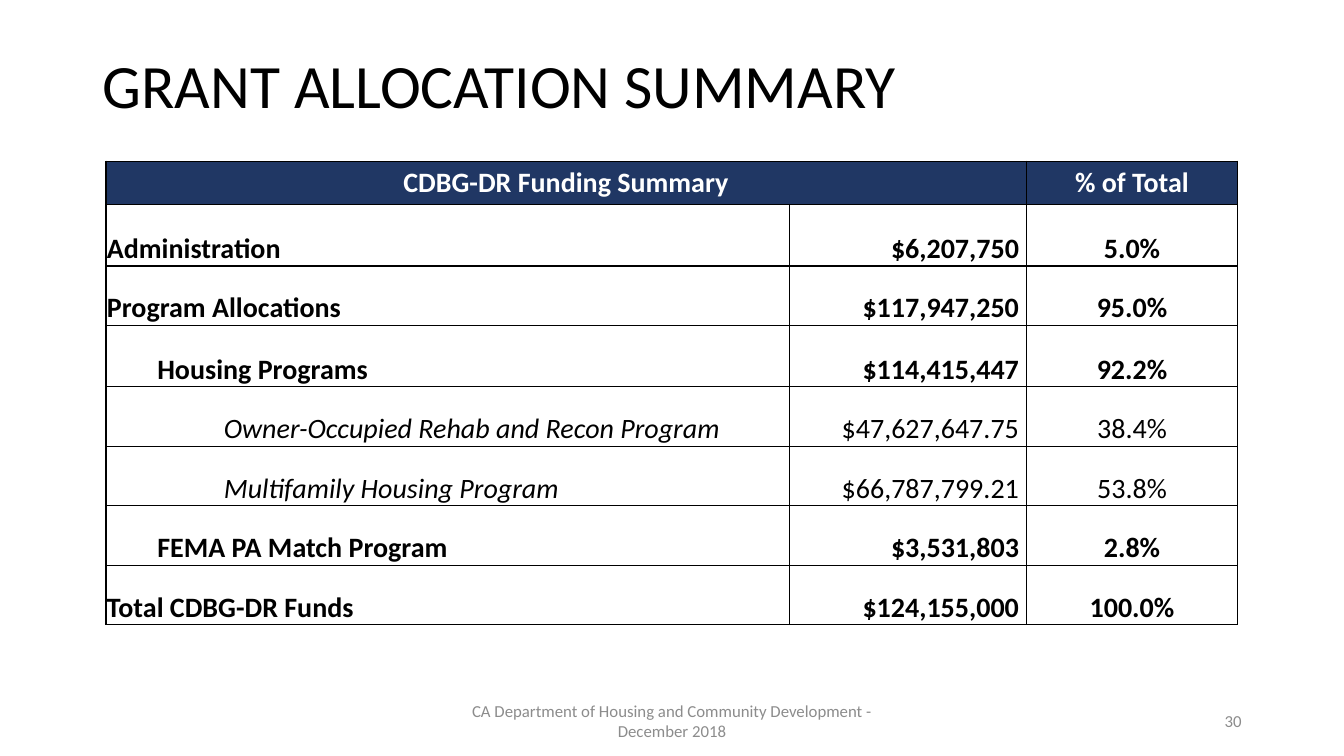
"""Build the grant allocation summary slide."""
import pptx
import pptx.util
import pptx.dml.color
import pptx.enum.text
import pptx.oxml
import pptx.oxml.ns

WIDE = pptx.util.Inches(13.333)
HIGH = pptx.util.Inches(7.5)
FONT = "Calibri"
BLACK, WHITE, NAVY, GRAY = "000000", "FFFFFF", "203764", "8C8C8C"
ALIGN = pptx.enum.text.PP_ALIGN
ANCHOR = pptx.enum.text.MSO_ANCHOR

COLS = [50.85, 17.63, 15.75]
ROWS = [5.73, 8.13, 7.87, 8.13, 7.87, 7.87, 7.87, 7.87]
FUNDS = [
    (0, "Administration", "$6,207,750", "5.0%"),
    (0, "Program Allocations", "$117,947,250", "95.0%"),
    (1, "Housing Programs", "$114,415,447", "92.2%"),
    (2, "Owner-Occupied Rehab and Recon Program", "$47,627,647.75", "38.4%"),
    (2, "Multifamily Housing Program", "$66,787,799.21", "53.8%"),
    (1, "FEMA PA Match Program", "$3,531,803", "2.8%"),
    (0, "Total CDBG-DR Funds", "$124,155,000", "100.0%"),
]


def across(share):
    """Turn a percentage of the slide width into a length."""
    return pptx.util.Emu(round(WIDE * share / 100))


def down(share):
    """Turn a percentage of the slide height into a length."""
    return pptx.util.Emu(round(HIGH * share / 100))


def color(code):
    """Turn a hex string into a colour."""
    return pptx.dml.color.RGBColor.from_string(code)


def style(par, size, code, align, bold=False, slant=False):
    """Set the font and alignment of a paragraph."""
    par.alignment = align
    font = par.font
    font.name, font.size = FONT, pptx.util.Pt(size)
    font.bold, font.italic = bold, slant
    font.color.rgb = color(code)


def label(slide, box, text, size, code, align):
    """Add a wrapped text box and return its paragraph."""
    left, top, width, height = box
    shape = slide.shapes.add_textbox(
        across(left), down(top), across(width), down(height))
    frame = shape.text_frame
    frame.word_wrap = True
    frame.vertical_anchor = ANCHOR.MIDDLE
    par = frame.paragraphs[0]
    par.text = text
    style(par, size, code, align)
    return par


def border(cell):
    """Draw a thin black line on each side of a cell."""
    props = cell._tc.get_or_add_tcPr()
    for side in ("lnL", "lnR", "lnT", "lnB"):
        props.append(pptx.oxml.parse_xml(
            f'<a:{side} {pptx.oxml.ns.nsdecls("a")} w="12700"><a:solidFill>'
            f'<a:srgbClr val="{BLACK}"/></a:solidFill></a:{side}>'))


def write(cell, text, align, head=False, level=0, detail=False, pad=0.01):
    """Fill a table cell with styled text."""
    cell.vertical_anchor = ANCHOR.MIDDLE if head else ANCHOR.BOTTOM
    cell.margin_left = pptx.util.Inches(0.17 if level == 2 else 0.01)
    cell.margin_right = pptx.util.Inches(pad)
    cell.margin_top, cell.margin_bottom = pptx.util.Inches(0.01), 0
    par = cell.text_frame.paragraphs[0]
    par.text = text
    style(par, 20, WHITE if head else BLACK, align,
          not detail, detail and level == 2)
    if level:
        indent = pptx.util.Inches(level / 2)
        par._p.get_or_add_pPr().set("marL", str(indent))
    if head:
        cell.fill.solid()
        cell.fill.fore_color.rgb = color(NAVY)
    else:
        cell.fill.background()


def budget(slide):
    """Add the funding table."""
    table = slide.shapes.add_table(
        len(ROWS), len(COLS), across(7.88), down(21.33),
        across(sum(COLS)), down(sum(ROWS))).table
    table.first_row = table.horz_banding = False
    for col, share in zip(table.columns, COLS):
        col.width = across(share)
    for row, share in zip(table.rows, ROWS):
        row.height = down(share)
    for cell in table.iter_cells():
        border(cell)
    table.cell(0, 0).merge(table.cell(0, 1))
    write(table.cell(0, 0), "CDBG-DR Funding Summary", ALIGN.CENTER, True)
    write(table.cell(0, 2), "% of Total", ALIGN.CENTER, True)
    for row, (level, name, amount, part) in enumerate(FUNDS, 1):
        detail = level == 2
        write(table.cell(row, 0), name, ALIGN.LEFT, level=level, detail=detail)
        write(table.cell(row, 1), amount, ALIGN.RIGHT, detail=detail, pad=0.07)
        write(table.cell(row, 2), part, ALIGN.CENTER, detail=detail)


def main():
    """Build and save the slide."""
    deck = pptx.Presentation()
    deck.slide_width, deck.slide_height = WIDE, HIGH
    slide = deck.slides.add_slide(deck.slide_layouts[6])
    title = label(slide, (6.9, 2, 86.25, 19.33), "GRANT ALLOCATION SUMMARY",
                  44, BLACK, ALIGN.LEFT)
    title.line_spacing = 0.9
    budget(slide)
    label(slide, (70.63, 92.67, 22.5, 5.33), "30", 12, GRAY, ALIGN.RIGHT)
    label(slide, (33.13, 92.67, 33.75, 5.33),
          "CA Department of Housing and Community Development - December 2018",
          12, GRAY, ALIGN.CENTER)
    deck.save("out.pptx")


if __name__ == "__main__":
    main()
